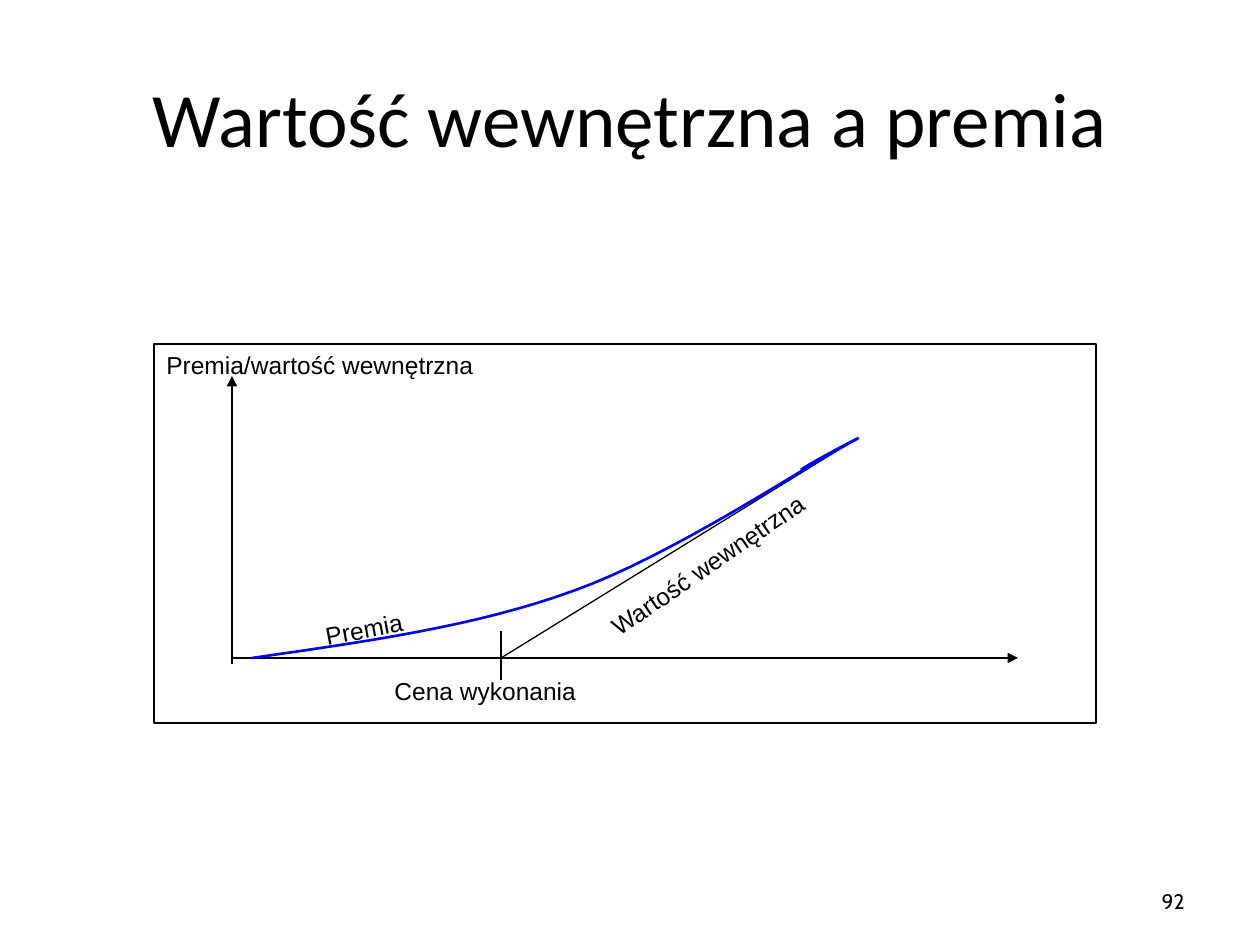
from lxml.etree import SubElement
from pptx import Presentation
from pptx.dml.color import RGBColor
from pptx.enum.shapes import MSO_CONNECTOR, MSO_SHAPE
from pptx.enum.text import MSO_ANCHOR, PP_ALIGN
from pptx.oxml.ns import qn
from pptx.util import Pt

SCALE = 914400 / 126
STEPS = 16
INK = {"text": "000000", "line": "000000", "panel": "FFFFFF", "curve": "0000FF"}


def px(*vals):
    return [round(v * SCALE) for v in vals]


def tint(name):
    return RGBColor.from_string(INK[name])


def write(frame, text, size, face, align=PP_ALIGN.LEFT, anchor=MSO_ANCHOR.TOP):
    frame.word_wrap = True
    frame.vertical_anchor = anchor
    para = frame.paragraphs[0]
    para.text = text
    para.alignment = align
    para.font.size = Pt(size)
    para.font.name = face
    para.font.color.rgb = tint("text")


def label(slide, box, text, turn=0, size=14, face="Arial", **opts):
    shape = slide.shapes.add_textbox(*px(*box))
    shape.rotation = turn
    write(shape.text_frame, text, size, face, **opts)


def line(slide, start, end, arrow=False):
    link = slide.shapes.add_connector(MSO_CONNECTOR.STRAIGHT, *px(*start, *end))
    link.line.color.rgb = tint("line")
    link.line.width = Pt(0.75)
    props = link._element.spPr
    if arrow:
        SubElement(props.find(qn("a:ln")), qn("a:tailEnd"), type="triangle")
    SubElement(props, qn("a:effectLst"))


def bezier(knots, t):
    u = 1 - t
    weights = (u**3, 3 * u * u * t, 3 * u * t * t, t**3)
    return tuple(sum(w * k[i] for w, k in zip(weights, knots)) for i in (0, 1))


def curve(slide, knots):
    points = [
        px(*bezier(knots[i:i + 4], step / STEPS))
        for i in range(0, len(knots) - 1, 3)
        for step in range(1, STEPS + 1)
    ]
    pen = slide.shapes.build_freeform(*px(*knots[0]), scale=1.0)
    pen.add_line_segments(points, close=False)
    shape = pen.convert_to_shape()
    shape.shadow.inherit = False
    shape.fill.background()
    shape.line.color.rgb = tint("curve")
    shape.line.width = Pt(1.5)


def heading(slide, box, text):
    title = slide.shapes.title
    title.left, title.top, title.width, title.height = px(*box)
    write(title.text_frame, text, 44, "Calibri", PP_ALIGN.CENTER, MSO_ANCHOR.MIDDLE)


def graph(slide, box):
    left, top, width, height = box

    def at(x, y):
        return left + x, top + y

    panel = slide.shapes.add_shape(MSO_SHAPE.RECTANGLE, *px(*box))
    panel.shadow.inherit = False
    panel.fill.solid()
    panel.fill.fore_color.rgb = tint("panel")
    panel.line.color.rgb = tint("line")
    panel.line.width = Pt(0.75)
    write(panel.text_frame, "Premia/wartość wewnętrzna", 14, "Arial")

    base, strike, axis = 314, 347, 78
    line(slide, at(axis, base + 6), at(axis, 32), arrow=True)
    line(slide, at(axis, base), at(864, base), arrow=True)
    line(slide, at(strike, base), at(694, 100))
    knots = [
        (98, base), (209, 298), (320, 283),
        (419, 247), (518, 212), (655, 120),
        (694, 100), (732, 79), (650, 122), (647, 126),
    ]
    curve(slide, [at(*knot) for knot in knots])
    line(slide, at(strike, 287), at(strike, 336))

    label(slide, (*at(228, 326), 258, 42), "Cena wykonania")
    label(slide, (*at(158, 257), 179, 42), "Premia", 349.3)
    label(slide, (*at(427, 198), 258, 42), "Wartość wewnętrzna", 325.6)


def main():
    deck = Presentation()
    deck.slide_width, deck.slide_height = px(1260, 945)
    slide = deck.slides.add_slide(deck.slide_layouts[5])
    heading(slide, (63, 38, 1134, 157), "Wartość wewnętrzna a premia")
    graph(slide, (154, 344, 942, 379))
    label(slide, (903, 876, 294, 50), "92", size=12, face="Cabin",
          align=PP_ALIGN.RIGHT, anchor=MSO_ANCHOR.MIDDLE)
    deck.save("out.pptx")


if __name__ == "__main__":
    main()
